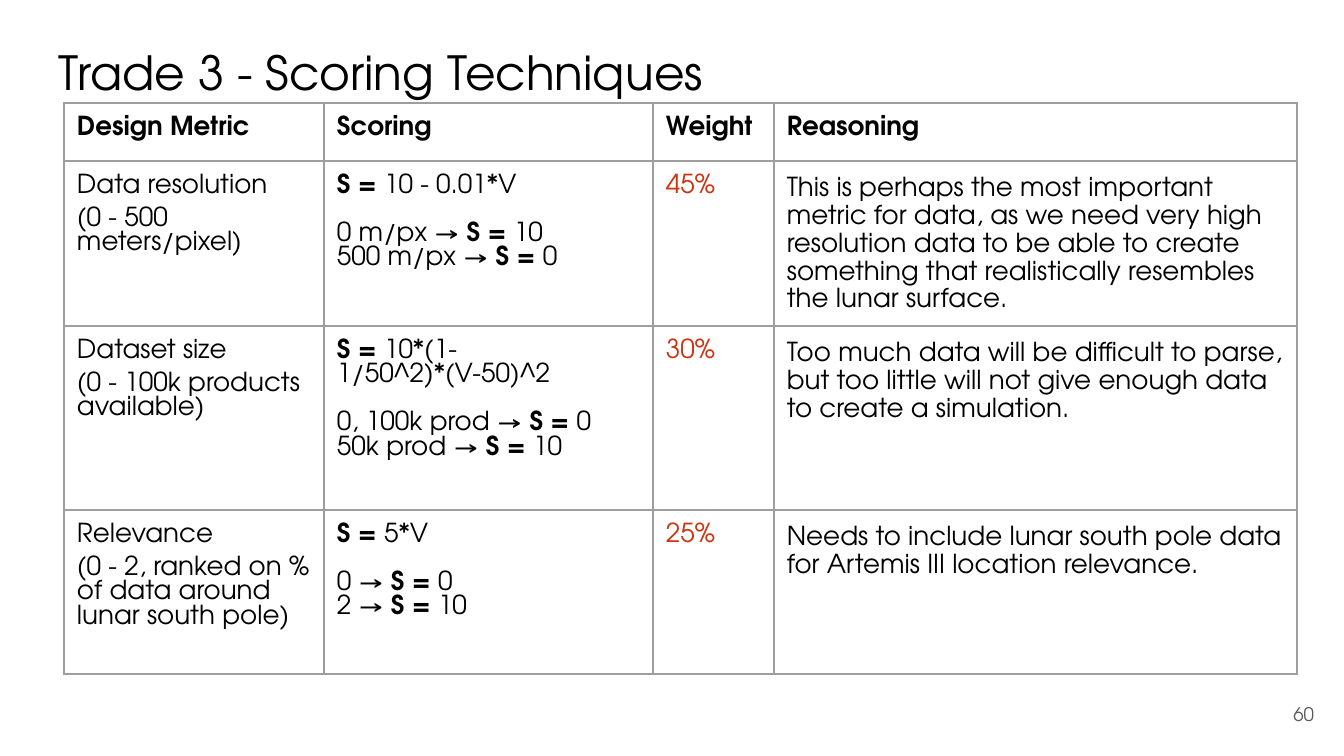
from lxml import etree
from pptx import Presentation
from pptx.dml.color import RGBColor
from pptx.enum.text import MSO_ANCHOR, MSO_AUTO_SIZE, PP_ALIGN
from pptx.oxml.ns import qn
from pptx.util import Pt

LEFT, RIGHT = PP_ALIGN.LEFT, PP_ALIGN.RIGHT
TOP, MIDDLE = MSO_ANCHOR.TOP, MSO_ANCHOR.MIDDLE

# Content
TITLE = "Trade 3 - Scoring Techniques"
PAGE = "60"
HEADERS = ["Design Metric", "Scoring", "Weight", "Reasoning"]
METRICS = [
    (["Data resolution", "(0 - 500 meters/pixel)"],
     ["S = 10 - 0.01*V", "0 m/px → S = 10", "500 m/px → S = 0"],
     "45%",
     "This is perhaps the most important metric for data, as we need very high "
     "resolution data to be able to create something that realistically "
     "resembles the lunar surface."),
    (["Dataset size", "(0 - 100k products available)"],
     ["S = 10*(1-1/50^2)*(V-50)^2", "0, 100k prod → S = 0", "50k prod → S = 10"],
     "30%",
     "Too much data will be difficult to parse, but too little will not give "
     "enough data to create a simulation."),
    (["Relevance", "(0 - 2, ranked on % of data around lunar south pole)"],
     ["S = 5*V", "0 → S = 0", "2 → S = 10"],
     "25%",
     "Needs to include lunar south pole data for Artemis III location relevance."),
]

THEME = {
    "font": "TeX Gyre Adventor",
    "text": "000000", "weight": "CC3311", "page": "595959", "border": "9E9E9E",
    "title_size": 25.2, "table_size": 14, "page_size": 10,
}

# Layout in px
SLIDE = (1344, 756)
TITLE_BOX = (46, 30, 1253, 85)
PAGE_BOX = (1246, 685, 81, 58)
TABLE_AT = (64, 103)
COLS = [260, 329, 121, 523]
ROWS = [58, 165, 184, 164]
INSET = 13
BOLD_MARK = "S ="


def px(n):
    return round(n * 914400 / 134.4)


def set_margins(target):
    for side in ("left", "top", "right", "bottom"):
        setattr(target, f"margin_{side}", px(INSET))


def add_run(p, text, size, color="text", bold=False):
    r = p.add_run()
    r.text = text
    r.font.color.rgb = RGBColor.from_string(THEME[color])
    for name, value in {"name": THEME["font"], "size": Pt(THEME[size]), "bold": bold}.items():
        setattr(r.font, name, value)


def format_paragraph(p, **values):
    for name, value in values.items():
        setattr(p, name, value)


def fill_box(sp, box, text, size, color, align, anchor):
    for name, value in zip(("left", "top", "width", "height"), box):
        setattr(sp, name, px(value))
    tf = sp.text_frame
    set_margins(tf)
    tf.word_wrap = True
    tf.auto_size = MSO_AUTO_SIZE.NONE
    tf.vertical_anchor = anchor
    tf.paragraphs[0].alignment = align
    add_run(tf.paragraphs[0], text, size, color)


def add_lines(cell, lines, gap):
    """Write one paragraph per line, with a gap after the first."""
    tf = cell.text_frame
    for i, line in enumerate(lines):
        p = tf.add_paragraph() if i else tf.paragraphs[0]
        if i == 1:
            p.space_before = Pt(gap)
        before, mark, after = line.partition(BOLD_MARK)
        for text, bold in ((before, False), (mark, True), (after, False)):
            if text:
                add_run(p, text, "table_size", bold=bold)


def style_cell(cell):
    set_margins(cell)
    cell.vertical_anchor = TOP
    cell.fill.background()
    tcPr = cell._tc.get_or_add_tcPr()
    for i, side in enumerate(("lnL", "lnR", "lnT", "lnB")):
        ln = etree.Element(qn(f"a:{side}"), w=str(Pt(0.75)))
        fill = etree.SubElement(ln, qn("a:solidFill"))
        etree.SubElement(fill, qn("a:srgbClr"), val=THEME["border"])
        tcPr.insert(i, ln)


def add_metric_table(s):
    frame = s.shapes.add_table(len(ROWS), len(COLS), *map(px, TABLE_AT),
                               px(sum(COLS)), px(sum(ROWS)))
    table = frame.table
    for col, width in zip(table.columns, COLS):
        col.width = px(width)
    for row, height in zip(table.rows, ROWS):
        row.height = px(height)
    for cell in table.iter_cells():
        style_cell(cell)

    for c, text in enumerate(HEADERS):
        add_run(table.cell(0, c).text_frame.paragraphs[0], text, "table_size", bold=True)
    for r, (metric, scoring, weight, reasoning) in enumerate(METRICS, 1):
        add_lines(table.cell(r, 0), metric, 5)
        add_lines(table.cell(r, 1), scoring, 13)
        add_run(table.cell(r, 2).text_frame.paragraphs[0], weight, "table_size", "weight")
        p = table.cell(r, 3).text_frame.paragraphs[0]
        format_paragraph(p, line_spacing=1.15, space_after=Pt(12))
        add_run(p, reasoning, "table_size")


def main():
    prs = Presentation()
    prs.slide_width, prs.slide_height = map(px, SLIDE)
    s = prs.slides.add_slide(prs.slide_layouts[5])

    # Page number, table and title
    page = s.shapes.add_textbox(*map(px, PAGE_BOX))
    fill_box(page, PAGE_BOX, PAGE, "page_size", "page", RIGHT, MIDDLE)
    add_metric_table(s)
    fill_box(s.shapes.title, TITLE_BOX, TITLE, "title_size", "text", LEFT, TOP)

    prs.save("out.pptx")


if __name__ == "__main__":
    main()
